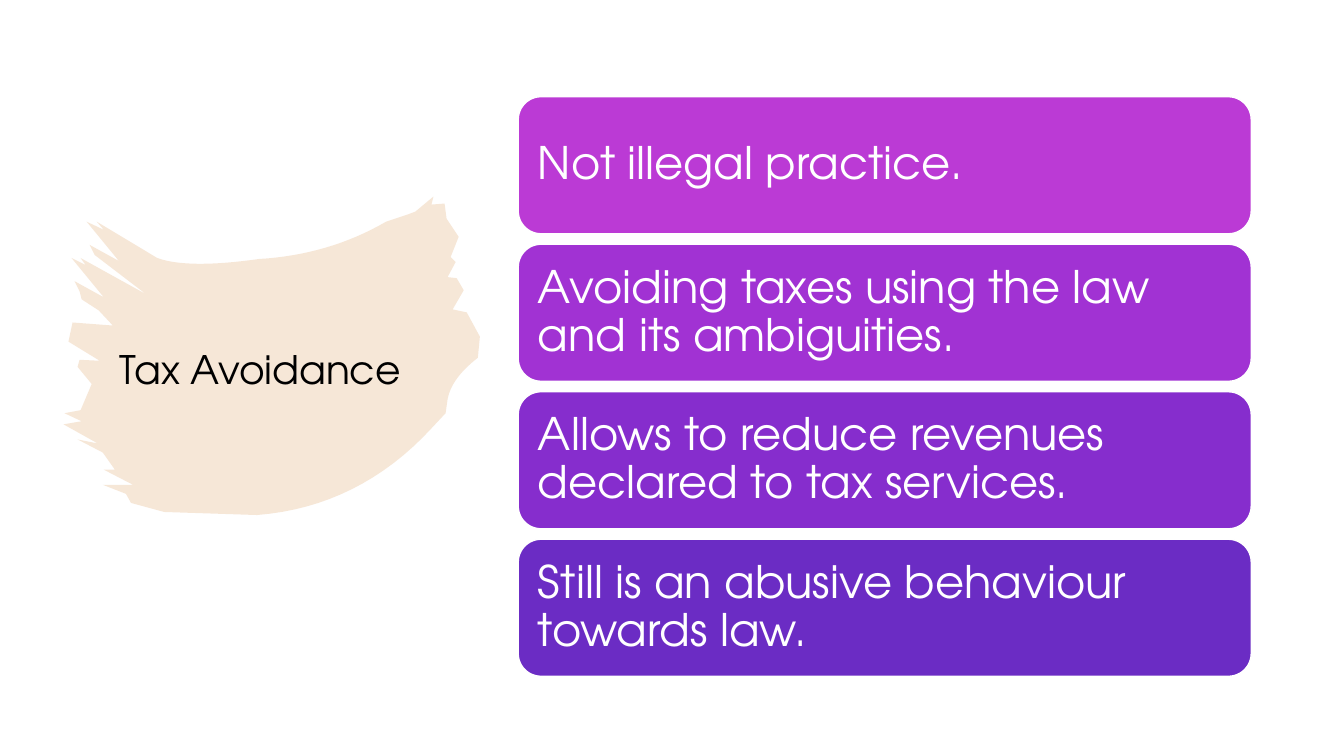
import pptx
import pptx.dml.color
import pptx.enum.shapes
import pptx.enum.text
import pptx.util
from lxml import etree
from pptx.oxml.ns import qn
from pptx.util import Inches

FONT = "TeX Gyre Adventor"
TITLE = "Tax Avoidance"
POINTS = [
    ("Not illegal practice.", "BB3AD5"),
    ("Avoiding taxes using the law and its ambiguities.", "A132D3"),
    ("Allows to reduce revenues declared to tax services.", "862DCD"),
    ("Still is an abusive behaviour towards law.", "6B2CC4"),
]
CARD_LEFT, CARD_WIDTH, CARD_HEIGHT = 5.14, 7.27, 1.36
FIRST_TOP, LAST_TOP = 0.96, 5.35

# Brush stroke in inches: a pair is a corner, four numbers bend towards a control point.
BRUSH_START = (4.3, 1.95)
BRUSH = [
    (4.28, 2.03), (4.41, 2.02), (4.43, 2.17), (4.55, 2.35), (4.47, 2.55),
    (4.52, 2.6), (4.44, 2.75), (4.53, 2.76), (4.6, 2.88), (4.49, 3.07), (4.63, 3.1),
    (4.76, 3.34), (4.74, 3.55), (4.48, 3.75, 4.44, 3.96), (4.42, 4.1), (4.28, 4.25),
    (3.56, 5.03, 2.55, 5.11), (1.63, 5.08), (1.3, 4.99), (1.25, 4.9), (1.02, 4.81),
    (1.32, 4.81), (1.03, 4.66), (1.14, 4.66), (1.02, 4.49), (0.77, 4.36), (0.97, 4.4),
    (0.63, 4.21), (0.81, 4.18), (0.64, 4.1), (0.8, 4.07), (0.91, 3.81), (0.77, 3.64),
    (0.79, 3.57), (0.99, 3.58), (0.68, 3.39), (0.72, 3.2), (1.12, 3.23), (0.98, 3.08),
    (0.81, 2.97), (0.79, 2.89), (0.74, 2.79), (1.03, 2.95), (0.71, 2.56), (0.85, 2.63),
    (0.8, 2.56), (1.45, 2.92), (0.94, 2.53), (0.89, 2.43), (1.18, 2.59), (0.86, 2.2),
    (1.03, 2.28), (0.96, 2.2), (1.56, 2.56), (1.86, 2.67, 2.57, 2.57),
    (3.26, 2.53, 3.83, 2.2), (4.04, 2.13), (4.12, 2.1),
]


def colour(hex_code):
    return pptx.dml.color.RGBColor.from_string(hex_code)


def write(shape, text, *, size, hex_code, inset):
    frame = shape.text_frame
    frame.word_wrap = True
    frame.vertical_anchor = pptx.enum.text.MSO_ANCHOR.MIDDLE
    frame.margin_left = frame.margin_right = Inches(inset)
    frame.margin_top = frame.margin_bottom = Inches(inset)
    paragraph = frame.paragraphs[0]
    paragraph.alignment = pptx.enum.text.PP_ALIGN.LEFT
    paragraph.line_spacing = 0.9
    run = paragraph.add_run()
    run.text = text
    run.font.name = FONT
    run.font.size = pptx.util.Pt(size)
    run.font.color.rgb = colour(hex_code)


def flatten(start, segments, steps=16):
    """Turn corners and curves into one list of corners."""
    corners = [start]
    for *control, x, y in segments:
        if not control:
            corners.append((x, y))
            continue
        nodes = [corners[-1], control, (x, y)]
        for step in range(1, steps + 1):
            t = step / steps
            weights = ((1 - t) ** 2, 2 * t * (1 - t), t ** 2)
            corners.append(tuple(
                sum(w * node[axis] for w, node in zip(weights, nodes)) for axis in (0, 1)
            ))
    return corners


def add_brush(slide):
    corners = [(Inches(x), Inches(y)) for x, y in flatten(BRUSH_START, BRUSH)]
    builder = slide.shapes.build_freeform(*corners[0], scale=1.0)
    builder.add_line_segments(corners[1:], close=True)
    brush = builder.convert_to_shape()
    brush.shadow.inherit = False
    brush.fill.solid()
    brush.fill.fore_color.rgb = colour("D5873A")
    brush.line.fill.background()
    tint = brush.element.spPr.find(f"{qn('a:solidFill')}/{qn('a:srgbClr')}")
    etree.SubElement(tint, qn("a:alpha"), val="20000")


def add_card(slide, top, text, hex_code):
    card = slide.shapes.add_shape(
        pptx.enum.shapes.MSO_SHAPE.ROUNDED_RECTANGLE,
        Inches(CARD_LEFT), Inches(top), Inches(CARD_WIDTH), Inches(CARD_HEIGHT),
    )
    card.shadow.inherit = False
    card.fill.solid()
    card.fill.fore_color.rgb = colour(hex_code)
    card.line.color.rgb = colour("FFFFFF")
    card.line.width = pptx.util.Pt(1)
    write(card, text, size=32, hex_code="FFFFFF", inset=0.13)


def main():
    deck = pptx.Presentation()
    deck.slide_width, deck.slide_height = Inches(13.33), Inches(7.5)
    slide = deck.slides.add_slide(deck.slide_layouts[6])
    add_brush(slide)
    title = slide.shapes.add_textbox(Inches(1.09), Inches(2.87), Inches(3.29), Inches(1.64))
    write(title, TITLE, size=28, hex_code="000000", inset=0.1)
    pitch = (LAST_TOP - FIRST_TOP) / (len(POINTS) - 1)
    for row, (text, hex_code) in enumerate(POINTS):
        add_card(slide, FIRST_TOP + row * pitch, text, hex_code)
    deck.save("out.pptx")


if __name__ == "__main__":
    main()
